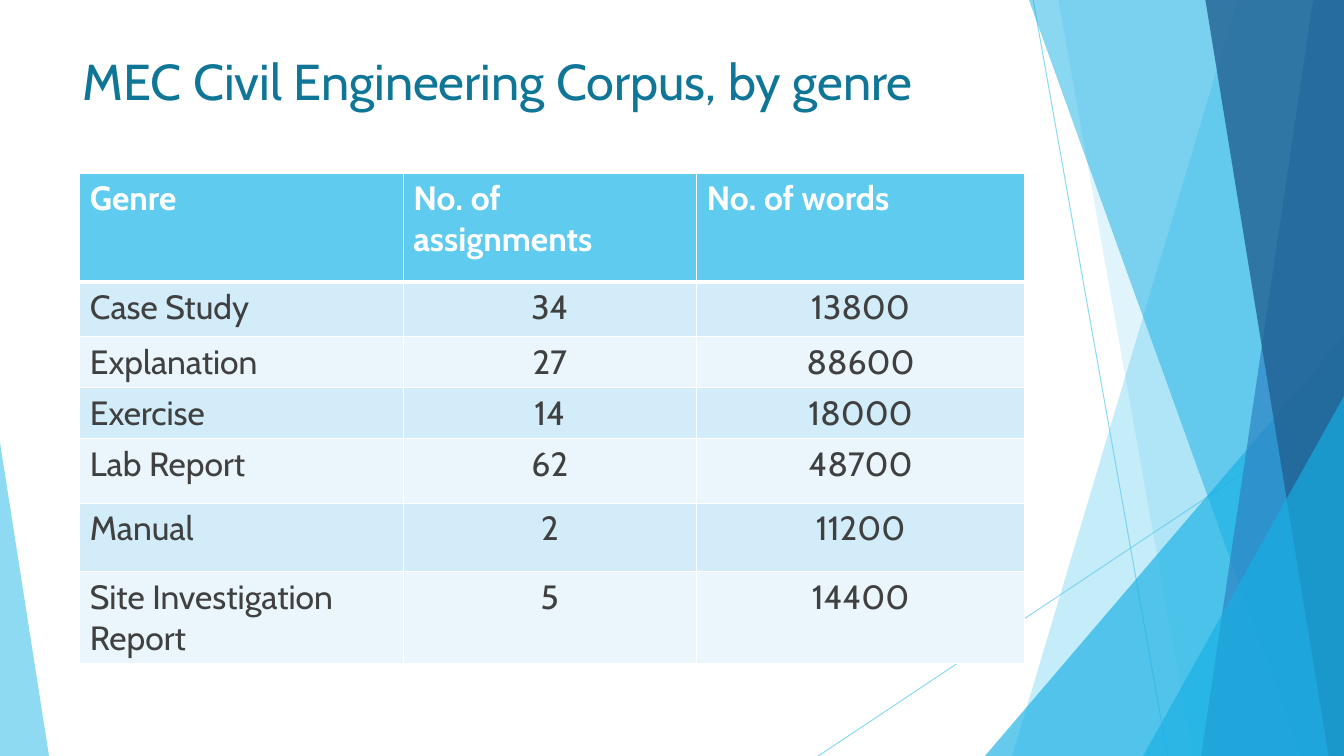
from lxml import etree
from pptx import Presentation
from pptx import util as u
from pptx.dml import color as dml
from pptx.enum import shapes, text
from pptx.oxml import ns

Pt = u.Pt
COLORS = {"sky": "5FCBEF", "cyan": "17B0E4", "blue": "2E83C3", "navy": "226292",
          "title": "0F7698", "body": "404040", "white": "FFFFFF",
          "odd": "D2ECF9", "even": "EAF6FC"}


def add_alpha(fill_owner, percent):
    for clr in fill_owner.iter(ns.qn("a:srgbClr")):
        etree.SubElement(clr, ns.qn("a:alpha")).set("val", str(percent * 1000))


def format_font(font, color, **values):
    font.color.rgb = dml.RGBColor.from_string(COLORS[color])
    for name, value in {"name": "Cabin", **values}.items():
        setattr(font, name, value)


deck = Presentation()
deck.slide_width, deck.slide_height = Pt(960), Pt(540)
slide = deck.slides.add_slide(deck.slide_layouts[5])

# Thin crossing lines
for ends in [(738, 0, 834, 540), (960, 290, 584.5, 540)]:
    ray = slide.shapes.add_connector(shapes.MSO_CONNECTOR.STRAIGHT, *map(Pt, ends))
    ray.line.color.rgb = dml.RGBColor.from_string(COLORS["sky"])
    ray.line.width = Pt(0.75)
    props = ray._element.spPr
    add_alpha(props, 70)
    etree.SubElement(props, ns.qn("a:effectLst"))

# Translucent facets, back to front: bands give top and bottom left corners and
# run to the right edge; triangles give a box and the position of the apex
facets = [
    ("band", (884, 723), "sky", 36),
    ("band", (756, 852), "sky", 20),
    ("triangle", (703.5, 240, 256.5, 300, 1), "cyan", 66),
    ("band", (735, 929.5), "cyan", 50),
    ("band", (938, 858), "blue", 70),
    ("band", (861, 949), "navy", 80),
    ("triangle", (816.5, 283, 143.5, 257, 1), "cyan", 66),
    ("triangle", (0, 316, 35, 224, 0), "sky", 70),
]
for kind, geometry, color, opacity in facets:
    if kind == "band":
        top_left, bottom_left = geometry
        outline = slide.shapes.build_freeform(Pt(top_left), 0)
        outline.add_line_segments(
            [(Pt(960), 0), (Pt(960), Pt(540)), (Pt(bottom_left), Pt(540))])
        facet = outline.convert_to_shape()
    else:
        *box, apex = geometry
        facet = slide.shapes.add_shape(
            shapes.MSO_SHAPE.ISOSCELES_TRIANGLE, *map(Pt, box))
        facet.adjustments[0] = apex
    facet.shadow.inherit = False
    facet.line.fill.background()
    facet.fill.solid()
    facet.fill.fore_color.rgb = dml.RGBColor.from_string(COLORS[color])
    add_alpha(facet._element.spPr, opacity)

# Title, in front of the facets
title = slide.shapes.title
slide.shapes._spTree.append(title._element)
for name, value in {"left": 52, "top": 32.5, "width": 691, "height": 82}.items():
    setattr(title, name, Pt(value))
title.text_frame.text = "MEC Civil Engineering Corpus, by genre"
title.text_frame.vertical_anchor = text.MSO_ANCHOR.TOP
heading = title.text_frame.paragraphs[0]
heading.alignment = text.PP_ALIGN.LEFT
format_font(heading.font, "title", size=Pt(36))

# Genre table
genres = [
    ("Genre", "No. of assignments", "No. of words"),
    ("Case Study", "34", "13800"),
    ("Explanation", "27", "88600"),
    ("Exercise", "14", "18000"),
    ("Lab Report", "62", "48700"),
    ("Manual", "2", "11200"),
    ("Site Investigation Report", "5", "14400"),
]
widths = [231, 209.5, 234.5]
heights = [78, 39, 36.5, 36.5, 46, 49, 64]
corpus = slide.shapes.add_table(len(genres), len(widths), Pt(57), Pt(123.5),
                                Pt(sum(widths)), Pt(sum(heights))).table
for column, width in zip(corpus.columns, widths):
    column.width = Pt(width)
for r, (genre, height) in enumerate(zip(genres, heights)):
    corpus.rows[r].height = Pt(height)
    header = r == 0
    for c, wording in enumerate(genre):
        cell = corpus.cell(r, c)
        cell.text = wording
        entry = cell.text_frame.paragraphs[0]
        centred = c > 0 and not header
        entry.alignment = text.PP_ALIGN.CENTER if centred else text.PP_ALIGN.LEFT
        format_font(entry.font, "white" if header else "body", size=Pt(24), bold=header)

        # White borders, heavier under the header
        borders = {"lnL": 1, "lnR": 1, "lnT": 3 if r == 1 else 1, "lnB": 3 if header else 1}
        for side, weight in borders.items():
            edge = etree.SubElement(cell._tc.get_or_add_tcPr(), ns.qn("a:" + side))
            edge.set("w", str(Pt(weight)))
            paint = etree.SubElement(edge, ns.qn("a:solidFill"))
            etree.SubElement(paint, ns.qn("a:srgbClr")).set("val", COLORS["white"])
        cell.fill.solid()
        shade = "sky" if header else "odd" if r % 2 else "even"
        cell.fill.fore_color.rgb = dml.RGBColor.from_string(COLORS[shade])

deck.save("out.pptx")
